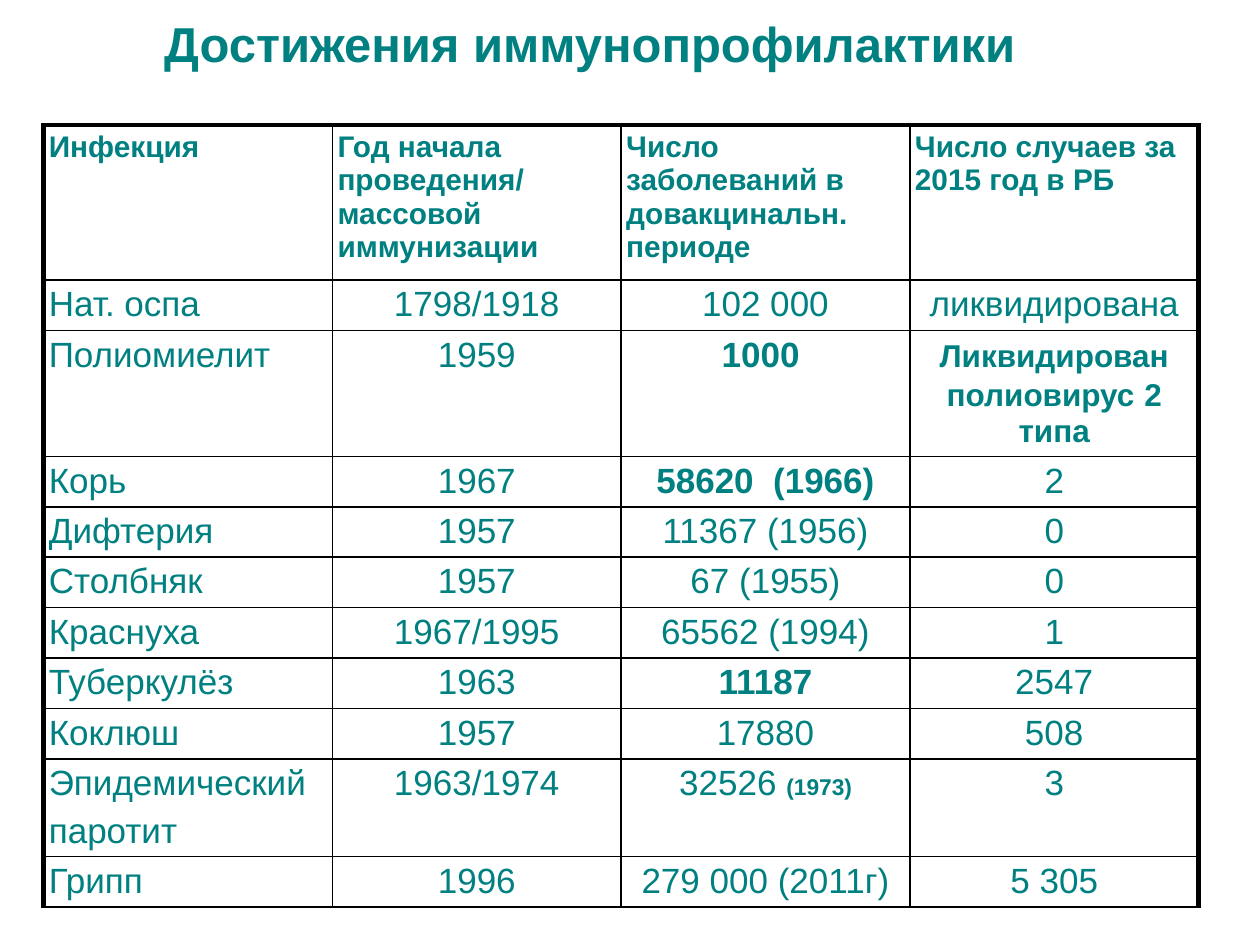
from lxml import etree
from pptx import Presentation
from pptx.dml.color import RGBColor
from pptx.enum.text import MSO_ANCHOR, PP_ALIGN
from pptx.oxml.ns import qn
from pptx.util import Pt

TEAL = RGBColor(0x00, 0x80, 0x80)
WHITE = RGBColor(0xFF, 0xFF, 0xFF)
BLACK = RGBColor(0x00, 0x00, 0x00)

HEADER = [
    "Инфекция",
    "Год начала проведения/ массовой иммунизации",
    "Число заболеваний в довакцинальн. периоде",
    "Число случаев за 2015 год в РБ",
]
# A cell is plain text, or a list of (text, size, bold) parts.
INFECTIONS = [
    ["Нат. оспа", "1798/1918", "102 000", "ликвидирована"],
    ["Полиомиелит", "1959", [("1000 ", 20, True)],
     [("Ликвидирован", 18, True), (" ", 20, False), ("полиовирус", 18, True),
      (" ", 20, False), ("2", 18, True), (" ", 20, False), ("типа", 18, True)]],
    ["Корь", "1967", [("58620  (1966)", 20, True)], "2"],
    ["Дифтерия", "1957", "11367 (1956)", "0"],
    ["Столбняк", "1957", "67 (1955)", "0"],
    ["Краснуха", "1967/1995", "65562 (1994)", "1"],
    ["Туберкулёз", "1963", [("11187", 20, True)], "2547"],
    ["Коклюш", "1957", "17880", "508"],
    ["Эпидемический\nпаротит", "1963/1974",
     [("32526 ", 20, False), ("(1973)", 13, True)], "3"],
    ["Грипп", "1996", "279 000 (2011г)", "5 305"],
]
ROW_HEIGHT = 28.8
TALL_ROWS = {0: 88.5, 2: 72, 9: 56}


def style_run(run, size, bold):
    run.font.name = "Arial"
    run.font.size = Pt(size)
    run.font.bold = bold
    run.font.color.rgb = TEAL


def set_borders(cell, widths):
    """Draw black borders; widths are points for left, right, top, bottom."""
    properties = cell._tc.get_or_add_tcPr()
    for index, (side, width) in enumerate(zip("LRTB", widths)):
        line = etree.Element(qn(f"a:ln{side}"), w=str(Pt(width)))
        fill = etree.SubElement(line, qn("a:solidFill"))
        etree.SubElement(fill, qn("a:srgbClr"), val=str(BLACK))
        properties.insert(index, line)


prs = Presentation()
prs.slide_width, prs.slide_height = Pt(720), Pt(540)
slide = prs.slides.add_slide(prs.slide_layouts[5])

# Title, followed by a line break that lifts it above the table
title = slide.shapes.title
title.left, title.top, title.width, title.height = Pt(25), Pt(26), Pt(624), Pt(45)
title.text_frame.vertical_anchor = MSO_ANCHOR.MIDDLE
heading = title.text_frame.paragraphs[0]
heading.text = "Достижения иммунопрофилактики\v"
heading.alignment = PP_ALIGN.CENTER
style_run(heading.runs[0], 28, True)
line_break = heading._p.find(qn("a:br"))
etree.SubElement(line_break, qn("a:rPr"), sz="2800")
etree.SubElement(heading._p, qn("a:endParaRPr"), sz="4000")

# Table
rows = [HEADER] + INFECTIONS
last_col = len(HEADER) - 1
heights = [TALL_ROWS.get(r, ROW_HEIGHT) for r in range(len(rows))]
table = slide.shapes.add_table(
    len(rows), len(HEADER), Pt(25), Pt(71.5), Pt(660), Pt(sum(heights))).table
table.horz_banding = False
for row, height in zip(table.rows, heights):
    row.height = Pt(height)
for column in table.columns:
    column.width = Pt(165)

for r, values in enumerate(rows):
    for c, value in enumerate(values):
        cell = table.cell(r, c)
        cell.fill.solid()
        cell.fill.fore_color.rgb = WHITE
        cell.margin_left = cell.margin_right = Pt(2.9)
        cell.margin_top = cell.margin_bottom = Pt(2.9)
        set_borders(cell, [3 if c == 0 else 1, 3 if c == last_col else 1,
                           3 if r == 0 else 1, 1])
        if isinstance(value, str):
            cell.text_frame.text = value
            for paragraph in cell.text_frame.paragraphs:
                style_run(paragraph.runs[0], 17 if r == 0 else 20, r == 0)
        else:
            for text, size, bold in value:
                run = cell.text_frame.paragraphs[0].add_run()
                run.text = text
                style_run(run, size, bold)
        for paragraph in cell.text_frame.paragraphs:
            paragraph.space_before = Pt(5)
            centred = r > 0 and c > 0
            paragraph.alignment = PP_ALIGN.CENTER if centred else PP_ALIGN.LEFT

prs.save("out.pptx")
